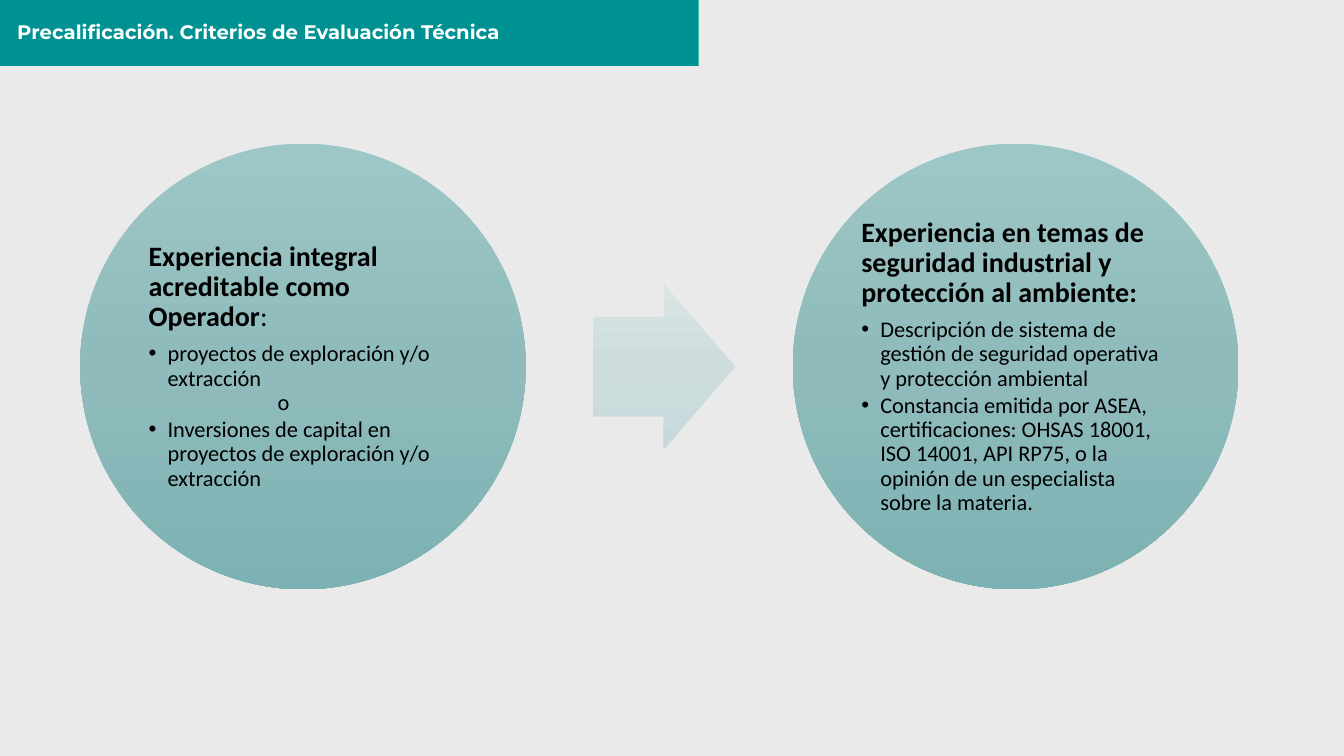
import copy
import math
import pptx
import pptx.util
import pptx.dml.color
import pptx.enum.shapes
import pptx.enum.text
import pptx.oxml
import pptx.oxml.ns

Cm, Pt = pptx.util.Cm, pptx.util.Pt
SHAPE = pptx.enum.shapes.MSO_SHAPE
MIDDLE = pptx.enum.text.MSO_ANCHOR.MIDDLE
LEFT = pptx.enum.text.PP_ALIGN.LEFT
qn = pptx.oxml.ns.qn

COLORS = {"background": "EAEAEA", "bar": "009193", "title": "FEFFFF", "text": "000000"}
GRADIENTS = {
    "circle": ("9DC6C6", "90BBBC", "7CB2B3"),
    "arrow": ("D8E5E5", "CDDDDD", "C6D9DA"),
}
HANGING = 0.48

EXPERIENCE = [
    ("heading", [("Experiencia integral acreditable como Operador", True), (":", False)]),
    ("bullet", "proyectos de exploración y/o extracción"),
    ("or", "o"),
    ("bullet", "Inversiones de capital en proyectos de exploración y/o extracción"),
]
SAFETY = [
    ("heading", [("Experiencia en temas de seguridad industrial y protección al ambiente:", True)]),
    ("bullet", "Descripción de sistema de gestión de seguridad operativa y protección ambiental"),
    ("bullet", "Constancia emitida por ASEA, certificaciones: OHSAS 18001, ISO 14001, "
               "API RP75, o la opinión de un especialista sobre la materia."),
]


def rgb(value):
    return pptx.dml.color.RGBColor.from_string(value)


def write(p, text, size=16, font="Calibri", color="text", bold=False):
    r = p.add_run()
    r.text = text
    r.font.size = Pt(size)
    r.font.name = font
    r.font.bold = bold
    r.font.color.rgb = rgb(COLORS[color])


def indent(p, left, hanging=0.0, bullet=False):
    pPr = p._p.get_or_add_pPr()
    pPr.set("marL", str(Cm(left)))
    pPr.set("indent", str(-Cm(hanging)))
    if bullet:
        ns = pptx.oxml.ns.nsdecls("a")
        pPr.append(pptx.oxml.parse_xml(f'<a:buFont {ns} typeface="Arial"/>'))
        pPr.append(pptx.oxml.parse_xml(f'<a:buChar {ns} char="•"/>'))


def gradient_shape(slide, kind, box, colors):
    """Add a borderless shape with a top-to-bottom gradient of three colours."""
    sp = slide.shapes.add_shape(kind, *map(Cm, box))
    sp.shadow.inherit = False
    sp.line.fill.background()
    sp.fill.gradient()
    sp.fill.gradient_angle = 270
    stops = sp._element.spPr.find(qn("a:gradFill")).find(qn("a:gsLst"))
    stops.append(copy.deepcopy(stops[0]))
    for stop, position, color in zip(sp.fill.gradient_stops, (0, 0.5, 1), colors):
        stop.position = position
        stop.color.rgb = rgb(color)
    return sp


def title_bar(slide, x, y, w, h):
    bar = slide.shapes.add_shape(SHAPE.RECTANGLE, Cm(x), Cm(y), Cm(w), Cm(h))
    bar.shadow.inherit = False
    bar.fill.solid()
    bar.fill.fore_color.rgb = rgb(COLORS["bar"])
    bar.line.fill.background()
    title = slide.shapes.title
    title._element.addprevious(bar._element)
    title.left, title.top = Cm(x + 0.18), Cm(y + 0.12)
    title.width, title.height = Cm(w - 0.33), Cm(h - 0.25)
    tf = title.text_frame
    tf.vertical_anchor = MIDDLE
    tf.auto_size = pptx.enum.text.MSO_AUTO_SIZE.NONE
    p = tf.paragraphs[0]
    p.alignment = LEFT
    p.line_spacing = 0.9
    write(p, "Precalificación. Criterios de Evaluación Técnica",
          size=14, font="Montserrat", color="title", bold=True)


def criteria_circle(slide, x, y, size, paragraphs):
    """Draw a circle with its text in the inscribed square."""
    gradient_shape(slide, SHAPE.OVAL, (x, y, size, size), GRADIENTS["circle"])
    side = size / math.sqrt(2)
    gap = (size - side) / 2
    tf = slide.shapes.add_textbox(Cm(x + gap), Cm(y + gap), Cm(side), Cm(side)).text_frame
    tf.word_wrap = True
    tf.vertical_anchor = MIDDLE
    tf.margin_left = tf.margin_right = tf.margin_top = tf.margin_bottom = Cm(0.08)
    for i, (kind, content) in enumerate(paragraphs):
        p = tf.add_paragraph() if i else tf.paragraphs[0]
        p.alignment = LEFT
        p.line_spacing = 0.9
        if kind == "heading":
            p.space_after = Pt(7)
            for text, bold in content:
                write(p, text, size=20, bold=bold)
            continue
        before_or = i + 1 < len(paragraphs) and paragraphs[i + 1][0] == "or"
        p.space_after = Pt(0 if before_or else 2.4)
        if kind == "bullet":
            indent(p, HANGING, HANGING, bullet=True)
        else:
            indent(p, 3.25)
        write(p, content)


def criteria_flow(slide, x, y, w, h):
    """Place a circle at each end of the box and an arrow between them."""
    criteria_circle(slide, x, y, h, EXPERIENCE)
    arrow_w, arrow_h = 3.58, 4.17
    arrow = gradient_shape(slide, SHAPE.RIGHT_ARROW,
                           (x + h + 1.69, y + (h - arrow_h) / 2, arrow_w, arrow_h),
                           GRADIENTS["arrow"])
    arrow.adjustments[0], arrow.adjustments[1] = 0.6, 0.5
    criteria_circle(slide, x + w - h, y, h, SAFETY)


def main():
    prs = pptx.Presentation()
    prs.slide_width, prs.slide_height = Cm(33.87), Cm(19.05)
    slide = prs.slides.add_slide(prs.slide_layouts[5])
    slide.background.fill.solid()
    slide.background.fill.fore_color.rgb = rgb(COLORS["background"])
    title_bar(slide, 0, 0, 17.61, 1.66)
    criteria_flow(slide, 2.02, 3.62, 29.19, 11.23)
    prs.save("out.pptx")


if __name__ == "__main__":
    main()
